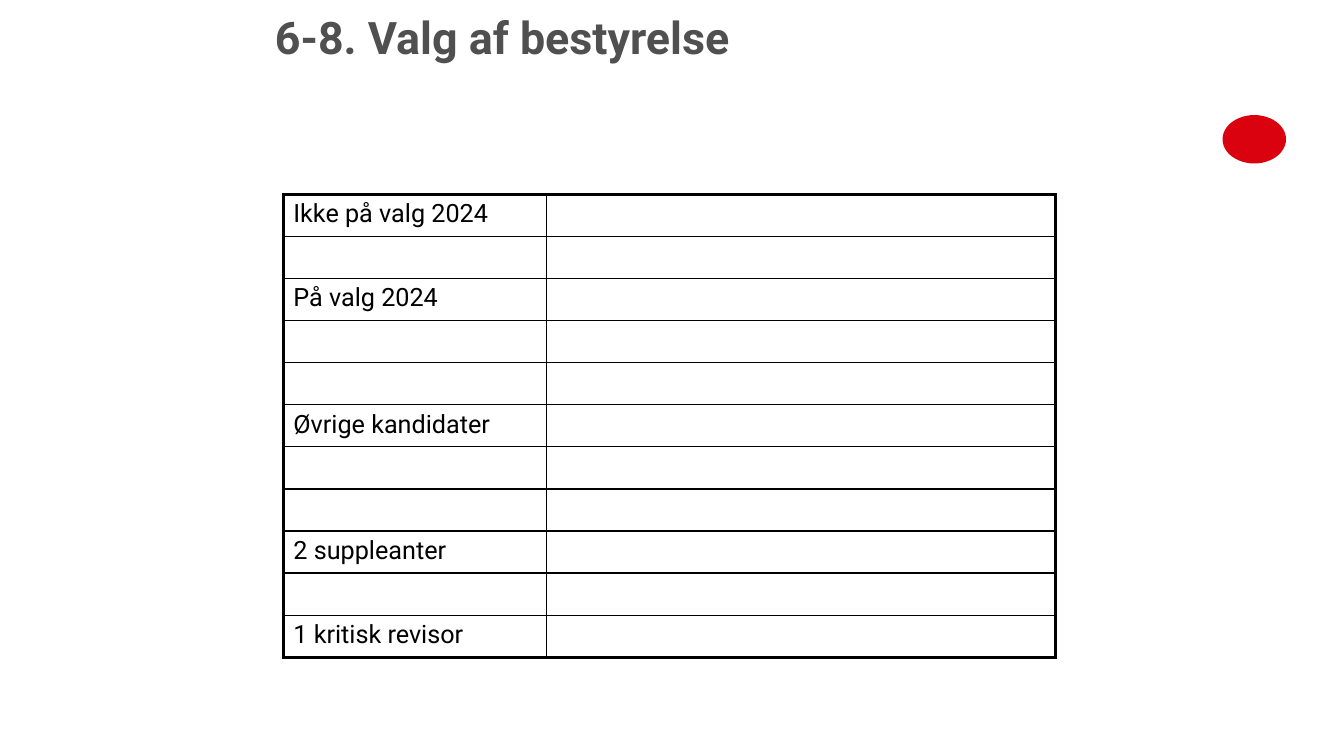
import pptx
import pptx.dml.color
import pptx.enum.shapes
import pptx.enum.text
import pptx.oxml
import pptx.oxml.ns
import pptx.util

Cm = pptx.util.Cm
Pt = pptx.util.Pt
RGBColor = pptx.dml.color.RGBColor

BLACK = RGBColor(0x00, 0x00, 0x00)
GREY = RGBColor(0x50, 0x50, 0x50)
RED = RGBColor(0xDA, 0x02, 0x0E)

THIN, THICK = Pt(1), Pt(2.25)
ROW_HEIGHT = 1.06
COLUMN_WIDTHS = (6.63, 12.83)
ROW_LABELS = (
    "Ikke på valg 2024", "",
    "På valg 2024", "", "",
    "Øvrige kandidater", "", "",
    "2 suppleanter", "",
    "1 kritisk revisor",
)


class SlideBuilder:
    font = "Roboto"

    def __init__(self, slide):
        self.slide = slide

    def add_run(self, p, text, size, color, bold=False):
        r = p.add_run()
        r.text = text
        r.font.name = self.font
        r.font.size = Pt(size)
        r.font.bold = bold
        r.font.color.rgb = color

    def title(self, text, left, top, width, height):
        sp = self.slide.shapes.add_textbox(Cm(left), Cm(top), Cm(width), Cm(height))
        tf = sp.text_frame
        tf.word_wrap = True
        tf.margin_left = tf.margin_right = tf.margin_top = tf.margin_bottom = 0
        tf.vertical_anchor = pptx.enum.text.MSO_ANCHOR.BOTTOM
        p = tf.paragraphs[0]
        p.line_spacing = Pt(36)
        self.add_run(p, text, 32, GREY, bold=True)

    def emblem(self, left, top, width, height):
        sp = self.slide.shapes.add_shape(
            pptx.enum.shapes.MSO_SHAPE.OVAL, Cm(left), Cm(top), Cm(width), Cm(height))
        sp.shadow.inherit = False
        sp.fill.solid()
        sp.fill.fore_color.rgb = RED
        sp.line.fill.background()

    def set_borders(self, cell, **widths):
        """Draw black borders; the keys are L, R, T and B."""
        tcPr = cell._tc.get_or_add_tcPr()
        for side, width in widths.items():
            tcPr.append(pptx.oxml.parse_xml(
                f'<a:ln{side} {pptx.oxml.ns.nsdecls("a")} w="{width}">'
                f'<a:solidFill><a:srgbClr val="{BLACK}"/></a:solidFill></a:ln{side}>'))

    def label_table(self, labels, left, top):
        """Table with labels in the first column and an empty second column."""
        last = len(labels) - 1
        table = self.slide.shapes.add_table(
            len(labels), len(COLUMN_WIDTHS), Cm(left), Cm(top),
            Cm(sum(COLUMN_WIDTHS)), Cm(ROW_HEIGHT * len(labels))).table
        table.first_row = table.horz_banding = False
        for column, width in zip(table.columns, COLUMN_WIDTHS):
            column.width = Cm(width)
        for i, label in enumerate(labels):
            table.rows[i].height = Cm(ROW_HEIGHT)
            for j, cell in enumerate(table.rows[i].cells):
                self.set_borders(
                    cell,
                    L=THICK if j == 0 else THIN,
                    R=THICK if j == 1 else THIN,
                    T=THICK if i == 0 else THIN,
                    B=THICK if i == last else THIN)
                cell.fill.background()
            if label:
                p = table.cell(i, 0).text_frame.paragraphs[0]
                self.add_run(p, label, 18, BLACK)


def main():
    prs = pptx.Presentation()
    prs.slide_width, prs.slide_height = Cm(33.87), Cm(19.05)
    s = SlideBuilder(prs.slides.add_slide(prs.slide_layouts[6]))
    s.emblem(30.81, 2.9, 1.6, 1.22)
    s.title("6-8. Valg af bestyrelse", 6.93, 0, 21.59, 1.6)
    s.label_table(ROW_LABELS, 7.14, 4.9)
    prs.save("out.pptx")


if __name__ == "__main__":
    main()
